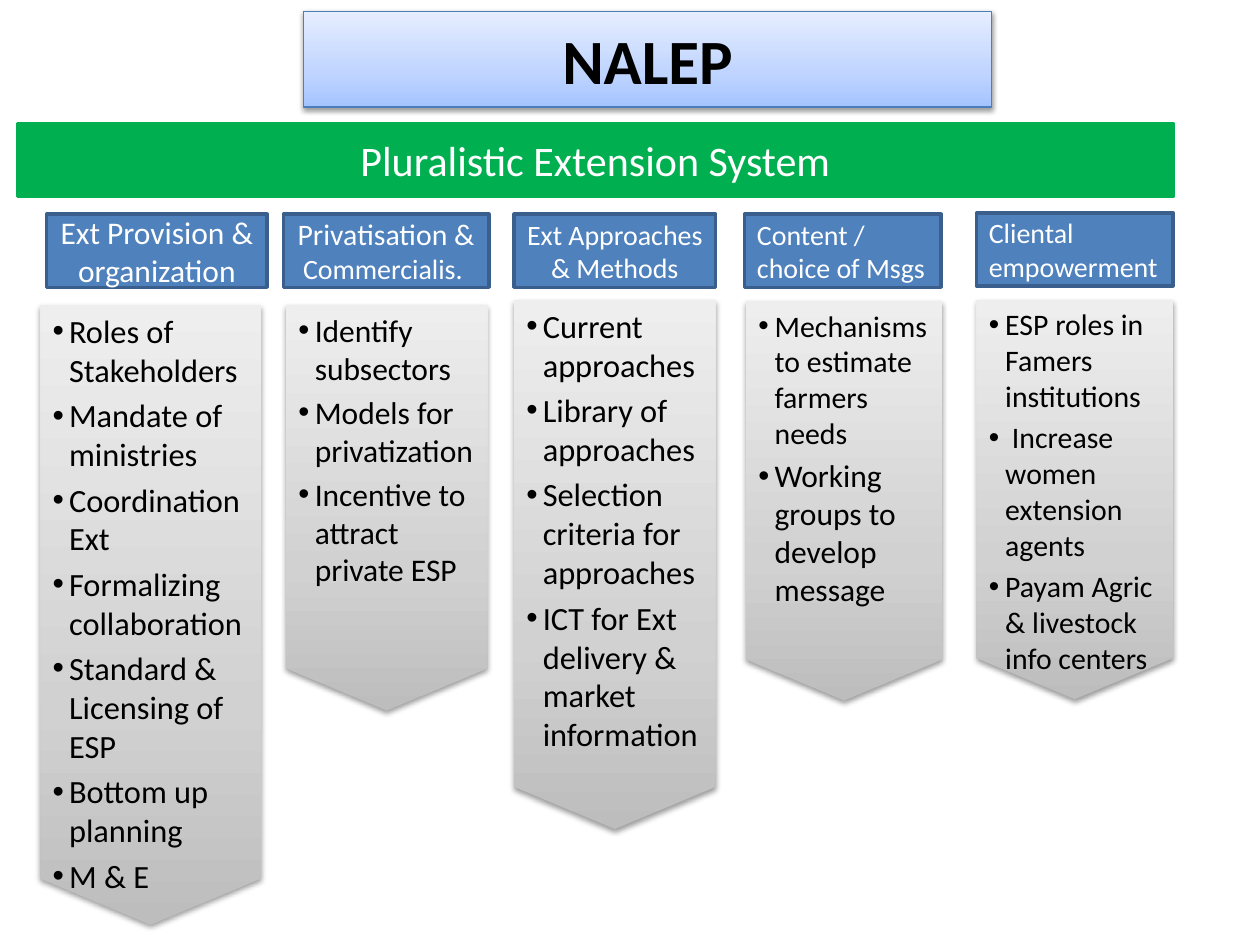
from dataclasses import dataclass
from lxml.etree import SubElement
from pptx import Presentation
from pptx.dml.color import RGBColor
from pptx.enum.shapes import MSO_SHAPE
from pptx.enum.text import MSO_ANCHOR, PP_ALIGN
from pptx.oxml.ns import qn
from pptx.util import Inches, Pt

WIDE, HIGH = Inches(10), Inches(7.5)


@dataclass(frozen=True)
class Theme:
    face: str = "Calibri"
    dark: str = "000000"
    light: str = "FFFFFF"
    green: str = "00B050"
    blue: str = "4F81BD"
    edge: str = "3A5F8C"
    rim: str = "4B7EBC"
    grey: tuple = ((0, "BDBDBD"), (35, "D1D1D1"), (100, "EEEEEE"))
    sky: tuple = ((0, "A4C4FF"), (35, "BFD4FF"), (100, "E6EEFF"))
    title: float = 36
    band: float = 24
    large: float = 18.5
    body: float = 18
    mid: float = 17
    small: float = 16


T = Theme()
MID, LEFT = PP_ALIGN.CENTER, PP_ALIGN.LEFT

# Each column: header box, header alignment, header runs, arrow box, items.
# Boxes are left, top, width, height in percent of the slide.
COLUMNS = [
    ((3.7, 22.67, 17.5, 7.73), MID, [("Ext Provision & organization", T.body)],
     (3.2, 32.27, 17.5, 65.6),
     [(text, T.large) for text in (
         "Roles of Stakeholders", "Mandate of ministries", "Coordination Ext",
         "Formalizing collaboration", "Standard & Licensing of ESP",
         "Bottom up planning", "M & E")]),
    ((22.5, 22.67, 16.3, 7.73), MID,
     [("Privatisation & ", T.mid), ("Commercialis. ", T.small)],
     (22.7, 32.27, 16, 42.93),
     [(text, T.body) for text in (
         "Identify subsectors", "Models for privatization",
         "Incentive to attract private ESP")]),
    ((40.8, 22.67, 16, 7.73), MID, [("Ext Approaches & Methods", T.small)],
     (40.8, 31.73, 16, 56),
     [(text, T.large) for text in (
         "Current approaches", "Library of approaches",
         "Selection criteria for approaches",
         "ICT for Ext delivery & market information")]),
    ((59.1, 22.67, 15.6, 7.73), LEFT, [("Content / choice of Msgs", T.small)],
     (59.2, 31.87, 15.6, 42.27),
     [("Mechanisms to estimate farmers needs", T.mid),
      ("Working groups to develop message", T.body)]),
    ((77.5, 22.53, 15.6, 7.73), LEFT, [("Cliental empowerment", T.small)],
     (77.5, 31.73, 15.6, 42.27),
     [(text, T.mid) for text in (
         "ESP roles in Famers institutions",
         " Increase women extension agents",
         "Payam Agric & livestock info centers")]),
]


def tint(node, color):
    return SubElement(node, qn("a:srgbClr"), val=color)


def paint(shape, fill):
    """Fill with one colour, or with stops that rise from the bottom."""
    if isinstance(fill, str):
        shape.fill.solid()
        shape.fill.fore_color.rgb = RGBColor.from_string(fill)
        return
    shape.fill.gradient()
    shape.fill.gradient_angle = 90
    stops = shape.element.spPr.find(".//" + qn("a:gsLst"))
    for stop in list(stops):
        stops.remove(stop)
    for share, color in fill:
        tint(SubElement(stops, qn("a:gs"), pos=str(share * 1000)), color)


def shade(shape):
    effect = shape.element.spPr.find(qn("a:effectLst"))
    cast = SubElement(effect, qn("a:outerShdw"), blurRad=str(Pt(3.1)),
                      dist=str(Pt(1.6)), dir="5400000", rotWithShape="0")
    SubElement(tint(cast, T.dark), qn("a:alpha"), val="38000")


def block(slide, kind, box, fill, line=None, width=2, shadow=False):
    sides = [int(part * full / 100)
             for part, full in zip(box, (WIDE, HIGH, WIDE, HIGH))]
    shape = slide.shapes.add_shape(kind, *sides)
    paint(shape, fill)
    if line:
        shape.line.color.rgb = RGBColor.from_string(line)
        shape.line.width = Pt(width)
    else:
        shape.line.fill.background()
    shape.shadow.inherit = False
    if shadow:
        shade(shape)
    shape.text_frame.word_wrap = True
    return shape


def write(para, text, size, color, bold=False):
    run = para.add_run()
    run.text = text
    style = {"name": T.face, "size": Pt(size), "bold": bold}
    for name, value in style.items():
        setattr(run.font, name, value)
    run.font.color.rgb = RGBColor.from_string(color)


def label(shape, runs, color, align=MID, bold=False):
    frame = shape.text_frame
    frame.vertical_anchor = MSO_ANCHOR.MIDDLE
    para = frame.paragraphs[0]
    para.alignment = align
    for text, size in runs:
        write(para, text, size, color, bold)


def bullets(shape, items):
    frame = shape.text_frame
    frame.vertical_anchor = MSO_ANCHOR.TOP
    for rank, (text, size) in enumerate(items):
        para = frame.add_paragraph() if rank else frame.paragraphs[0]
        props = para._p.get_or_add_pPr()
        props.set("marL", str(Inches(0.13)))
        props.set("indent", str(-Inches(0.13)))
        SubElement(props, qn("a:buFont"), typeface="Arial")
        SubElement(props, qn("a:buChar"), char="•")
        para.alignment = LEFT
        if rank:
            para.space_before = Pt(size * 0.2)
        write(para, text, size, T.dark)


def column(slide, top, align, runs, box, items):
    head = block(slide, MSO_SHAPE.RECTANGLE, top, T.blue, T.edge)
    label(head, runs, T.light, align)
    arrow = block(slide, MSO_SHAPE.DOWN_ARROW, box, T.grey, shadow=True)
    arrow.adjustments[0], arrow.adjustments[1] = 1, 0.21
    bullets(arrow, items)


def main():
    deck = Presentation()
    deck.slide_width, deck.slide_height = WIDE, HIGH
    slide = deck.slides.add_slide(deck.slide_layouts[6])
    band = block(slide, MSO_SHAPE.RECTANGLE, (1.4, 13.07, 91.7, 7.73),
                 T.green, T.green)
    label(band, [("Pluralistic Extension System", T.band)], T.light)
    for parts in COLUMNS:
        column(slide, *parts)
    title = block(slide, MSO_SHAPE.RECTANGLE, (24.1, 1.2, 54.6, 10.13),
                  T.sky, T.rim, 0.75, shadow=True)
    label(title, [("NALEP", T.title)], T.dark, bold=True)
    deck.save("out.pptx")


if __name__ == "__main__":
    main()
